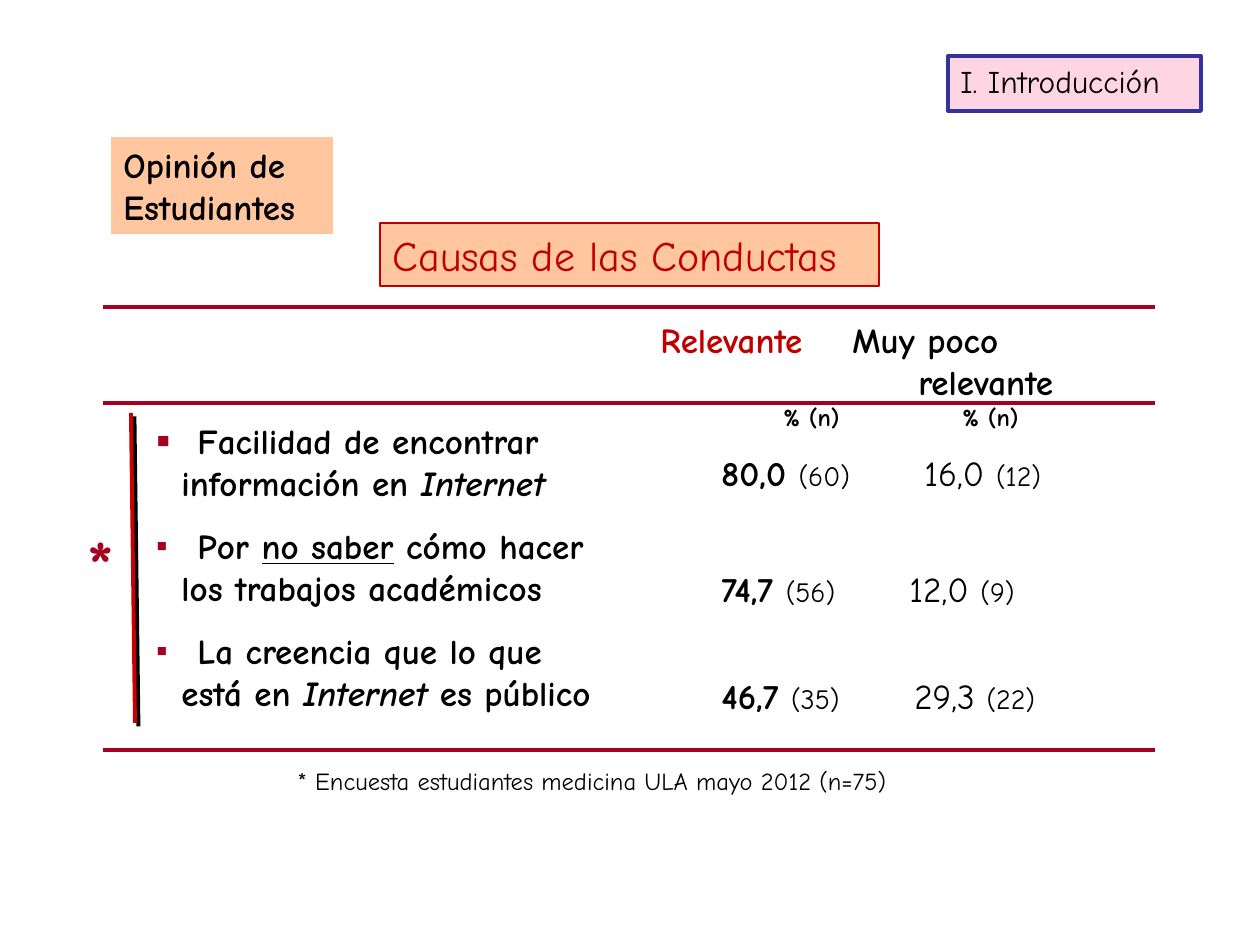
from lxml import etree
from pptx import Presentation, util as u
from pptx.dml.color import RGBColor
from pptx.enum import shapes, text
from pptx.oxml import ns

PX = 914400 / 126
FONT = "Comic Neue"
CRIMSON, RED, PEACH, BLACK = "A50021", "C00000", "FFC69F", "000000"
BOLD = {"bold": True}


def px(length):
    return u.Emu(round(length * PX))


def rgb(value):
    return RGBColor.from_string(value)


def child(parent, tag, **attributes):
    return etree.SubElement(parent, ns.qn(tag), attributes)


class SlideBuilder:
    """Draws styled elements on one slide."""

    def __init__(self, presentation):
        self.slide = presentation.slides.add_slide(presentation.slide_layouts[5])

    def fill_text(self, shape, paragraphs, wrap=False, **style):
        frame = shape.text_frame
        settings = {"word_wrap": wrap, "auto_size": text.MSO_AUTO_SIZE.NONE,
                    "vertical_anchor": text.MSO_ANCHOR.TOP}
        for name, value in settings.items():
            setattr(frame, name, value)
        for index, runs in enumerate(paragraphs):
            paragraph = frame.add_paragraph() if index else frame.paragraphs[0]
            paragraph.alignment = text.PP_ALIGN.LEFT
            for words, changes in runs:
                run = paragraph.add_run()
                run.text = words
                values = {"name": FONT, "size": 20, "color": BLACK, **style, **changes}
                run.font.color.rgb = rgb(values.pop("color"))
                values["size"] = u.Pt(values["size"])
                for name, value in values.items():
                    setattr(run.font, name, value)
        return frame.paragraphs

    def place(self, shape, box):
        for name, value in zip(("left", "top", "width", "height"), box):
            setattr(shape, name, px(value))

    def paint(self, shape, fill, line=None, weight=1):
        shape.fill.solid()
        shape.fill.fore_color.rgb = rgb(fill)
        if line:
            shape.line.color.rgb = rgb(line)
            shape.line.width = u.Pt(weight)
        else:
            shape.line.fill.background()

    def title(self, box, words, **style):
        shape = self.slide.shapes.title
        self.place(shape, box)
        self.paint(shape, PEACH, RED, 0.75)
        self.fill_text(shape, [[(words, {})]], **style)

    def text_box(self, box, paragraphs, **style):
        shape = self.slide.shapes.add_textbox(*map(px, box))
        return self.fill_text(shape, paragraphs, **style)

    def panel(self, box, paragraphs, fill, line=None, weight=1, **style):
        shape = self.slide.shapes.add_shape(shapes.MSO_SHAPE.RECTANGLE, *map(px, box))
        shape.shadow.inherit = False
        self.paint(shape, fill, line, weight)
        self.fill_text(shape, paragraphs, **style)

    def line(self, start, end, color, shadow=False):
        connector = self.slide.shapes.add_connector(
            shapes.MSO_CONNECTOR.STRAIGHT, *map(px, start + end))
        connector.line.color.rgb = rgb(color)
        connector.line.width = u.Pt(2.25)
        effects = child(connector._element.spPr, "a:effectLst")
        if shadow:
            self.shadow(effects)

    def shadow(self, effects):
        outer = child(effects, "a:outerShdw", dist="35921", dir="2700000", algn="ctr", rotWithShape="0")
        child(outer, "a:srgbClr", val=BLACK)

    def text_shadow(self, run):
        properties = run._r.get_or_add_rPr()
        effects = etree.Element(ns.qn("a:effectLst"))
        properties.find(ns.qn("a:solidFill")).addnext(effects)
        self.shadow(effects)

    def tabs(self, paragraph, stops):
        tab_list = child(paragraph._p.get_or_add_pPr(), "a:tabLst")
        for stop in stops:
            child(tab_list, "a:tab", pos=str(px(stop)), algn="l")

    def bullet_list(self, box, items, **style):
        lines = [line for item in items for line in item]
        for index, paragraph in enumerate(self.text_box(box, lines, wrap=True, **style)):
            properties = paragraph._p.get_or_add_pPr()
            if index % 2:
                properties.set("marL", str(px(25)))
                continue
            if index:
                paragraph.space_before = u.Pt(12)
            properties.set("marL", str(px(41)))
            properties.set("indent", str(-px(41)))
            child(child(properties, "a:buClr"), "a:srgbClr", val=CRIMSON)
            child(properties, "a:buSzPct", val="80000" if index else "100000")
            child(properties, "a:buFont", typeface=FONT)
            child(properties, "a:buChar", char="▪")


def main():
    presentation = Presentation()
    presentation.slide_width, presentation.slide_height = u.Inches(10), u.Inches(7.5)
    builder = SlideBuilder(presentation)

    headers = builder.text_box((609, 312, 568, 127), [
        [("\tRelevante", {"color": RED}), ("\tMuy poco", {})],
        [("\trelevante", {})],
        [("\t% (n)\t% (n)", {"size": 14})],
    ], wrap=True, **BOLD)
    for paragraph, stops in zip(headers, ((39, 231), (297,), (162, 341))):
        builder.tabs(paragraph, stops)

    rows = [
        (445, 203, "80,0", "(60)", "16,0", "(12)"),
        (561, 188, "74,7", "(56)", "12,0", "(9)"),
        (668, 193, "46,7", "(35)", "29,3", "(22)"),
    ]
    for top, stop, relevant, relevant_n, minor, minor_n in rows:
        row = builder.text_box((709, top, 380, 55), [[
            (relevant + " ", BOLD), (relevant_n, {"size": 16}),
            ("\t" + minor + " ", {}), (minor_n, {"size": 16})]])
        builder.tabs(row[0], [stop])

    builder.bullet_list((144, 413, 536, 310), [
        ([("Facilidad de encontrar", {})],
         [("información en ", {}), ("Internet", {"italic": True})]),
        ([("Por ", {}), ("no saber", {"underline": True}), (" cómo hacer", {})],
         [("los trabajos académicos", {})]),
        ([("La creencia que lo que", {})],
         [("está en ", {}), ("Internet ", {"italic": True}), ("es público", {})]),
    ], **BOLD)

    for y in (307, 403, 750):
        builder.line((103, y), (1155, y), CRIMSON)
    builder.line((131, 413), (135, 723), "CC0000", shadow=True)
    asterisk = builder.text_box((75, 514, 63, 97), [[("*", {})]], size=40, color=CRIMSON, bold=True)
    builder.text_shadow(asterisk[0].runs[0])

    builder.text_box((285, 760, 680, 43),
                     [[("* Encuesta estudiantes medicina ULA mayo 2012 (n=75)", {})]], size=14)
    builder.panel((111, 137, 222, 97), [[("Opinión de", {})], [("Estudiantes", {})]], PEACH, **BOLD)
    builder.panel((948, 56, 253, 55), [[("I. Introducción", {})]],
                  "FFD5E3", "333399", 2.25, size=18)
    builder.title((380, 223, 499, 63), "Causas de las Conductas", size=24, color=RED)
    presentation.save("out.pptx")


if __name__ == "__main__":
    main()
